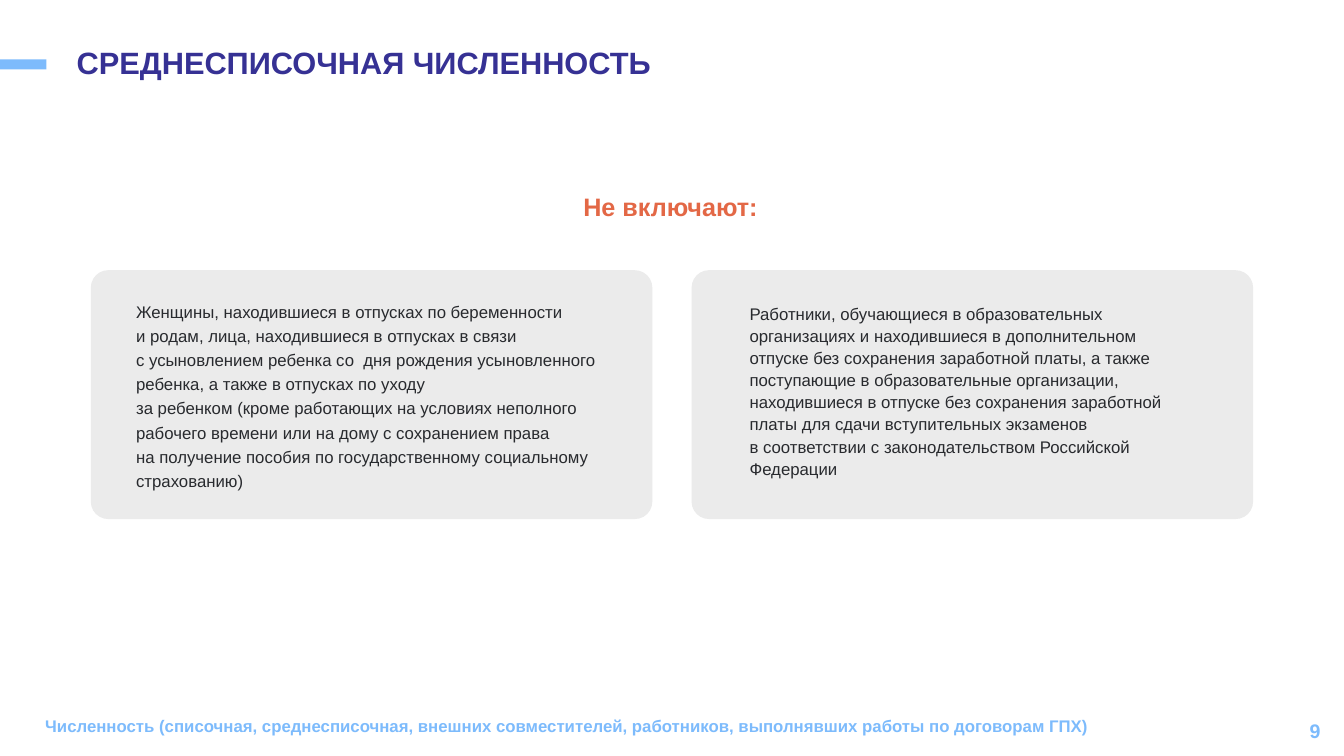
import pptx
import pptx.util
import pptx.dml.color
import pptx.enum.shapes
import pptx.enum.text
from dataclasses import dataclass

Cm = pptx.util.Cm
ALIGN = pptx.enum.text.PP_ALIGN
ANCHOR = pptx.enum.text.MSO_ANCHOR
SHAPE = pptx.enum.shapes.MSO_SHAPE

TITLE = "СРЕДНЕСПИСОЧНАЯ ЧИСЛЕННОСТЬ"
HEADING = "Не включают:"
FOOTER = ("Численность (списочная, среднесписочная, внешних совместителей, "
          "работников, выполнявших работы по договорам ГПХ)")
PAGE = "9"
# Each card: text, text box (left, top, width, height) in cm, line spacing
CARDS = [
    ("Женщины, находившиеся в отпусках по беременности \n"
     "и родам, лица, находившиеся в отпусках в связи\n"
     "с усыновлением ребенка со  дня рождения усыновленного ребенка, "
     "а также в отпусках по уходу \n"
     "за ребенком (кроме работающих на условиях неполного рабочего времени "
     "или на дому с сохранением права \n"
     "на получение пособия по государственному социальному страхованию)",
     (3.18, 7.37, 12.17, 5.21), 1.2),
    ("Работники, обучающиеся в образовательных организациях и находившиеся "
     "в дополнительном отпуске без сохранения заработной платы, а также "
     "поступающие в образовательные организации, находившиеся в отпуске "
     "без сохранения заработной платы для сдачи вступительных экзаменов \n"
     "в соответствии с законодательством Российской Федерации",
     (18.64, 7.47, 11.68, 4.95), 1.1),
]

CARD_LEFT, CARD_TOP, CARD_WIDTH, CARD_HEIGHT = 2.29, 6.81, 14.15, 6.27
CARD_GAP = 0.99


@dataclass(frozen=True)
class Theme:
    font: str = "Arial"
    title: str = "363194"
    accent: str = "7DBBFC"
    heading: str = "E36846"
    text: str = "282A2E"
    card: str = "EBEBEB"
    title_size: int = 22
    heading_size: int = 18
    page_size: int = 14
    text_size: int = 12


THEME = Theme()


def rgb(color):
    return pptx.dml.color.RGBColor.from_string(color)


def write(sp, box, text, size, color, bold=True, spacing=1.0,
          align=ALIGN.LEFT, anchor=ANCHOR.TOP):
    """Place a text shape and fill it with one formatted paragraph."""
    sp.left, sp.top, sp.width, sp.height = map(Cm, box)
    tf = sp.text_frame
    tf.word_wrap = True
    tf.auto_size = pptx.enum.text.MSO_AUTO_SIZE.NONE
    tf.vertical_anchor = anchor
    p = tf.paragraphs[0]
    p.text = text
    p.alignment = align
    p.line_spacing = spacing
    p.font.name = THEME.font
    p.font.size = pptx.util.Pt(size)
    p.font.bold = bold
    p.font.color.rgb = rgb(color)


def add_text(s, box, *args, **style):
    write(s.shapes.add_textbox(*map(Cm, box)), box, *args, **style)


def add_block(s, kind, box, color):
    sp = s.shapes.add_shape(kind, *map(Cm, box))
    sp.shadow.inherit = False
    sp.fill.solid()
    sp.fill.fore_color.rgb = rgb(color)
    sp.line.fill.background()
    return sp


def main():
    prs = pptx.Presentation()
    prs.slide_width, prs.slide_height = Cm(33.87), Cm(19.05)
    s = prs.slides.add_slide(prs.slide_layouts[5])

    add_block(s, SHAPE.RECTANGLE, (0, 1.5, 1.17, 0.25), THEME.accent)
    write(s.shapes.title, (1.68, 1.09, 26.44, 1.45), TITLE,
          THEME.title_size, THEME.title, spacing=0.9)
    add_text(s, (14.45, 4.78, 4.95, 1.02), HEADING,
             THEME.heading_size, THEME.heading, spacing=0.9)

    for i, (text, box, spacing) in enumerate(CARDS):
        left = CARD_LEFT + i * (CARD_WIDTH + CARD_GAP)
        card = add_block(s, SHAPE.ROUNDED_RECTANGLE,
                         (left, CARD_TOP, CARD_WIDTH, CARD_HEIGHT), THEME.card)
        card.adjustments[0] = 0.07
        add_text(s, box, text, THEME.text_size, THEME.text,
                 bold=False, spacing=spacing)

    add_text(s, (0.89, 17.91, 28.4, 1.02), FOOTER,
             THEME.text_size, THEME.accent)
    add_text(s, (25.91, 17.91, 7.62, 1.02), PAGE, THEME.page_size,
             THEME.accent, align=ALIGN.RIGHT, anchor=ANCHOR.MIDDLE)
    prs.save("out.pptx")


if __name__ == "__main__":
    main()
